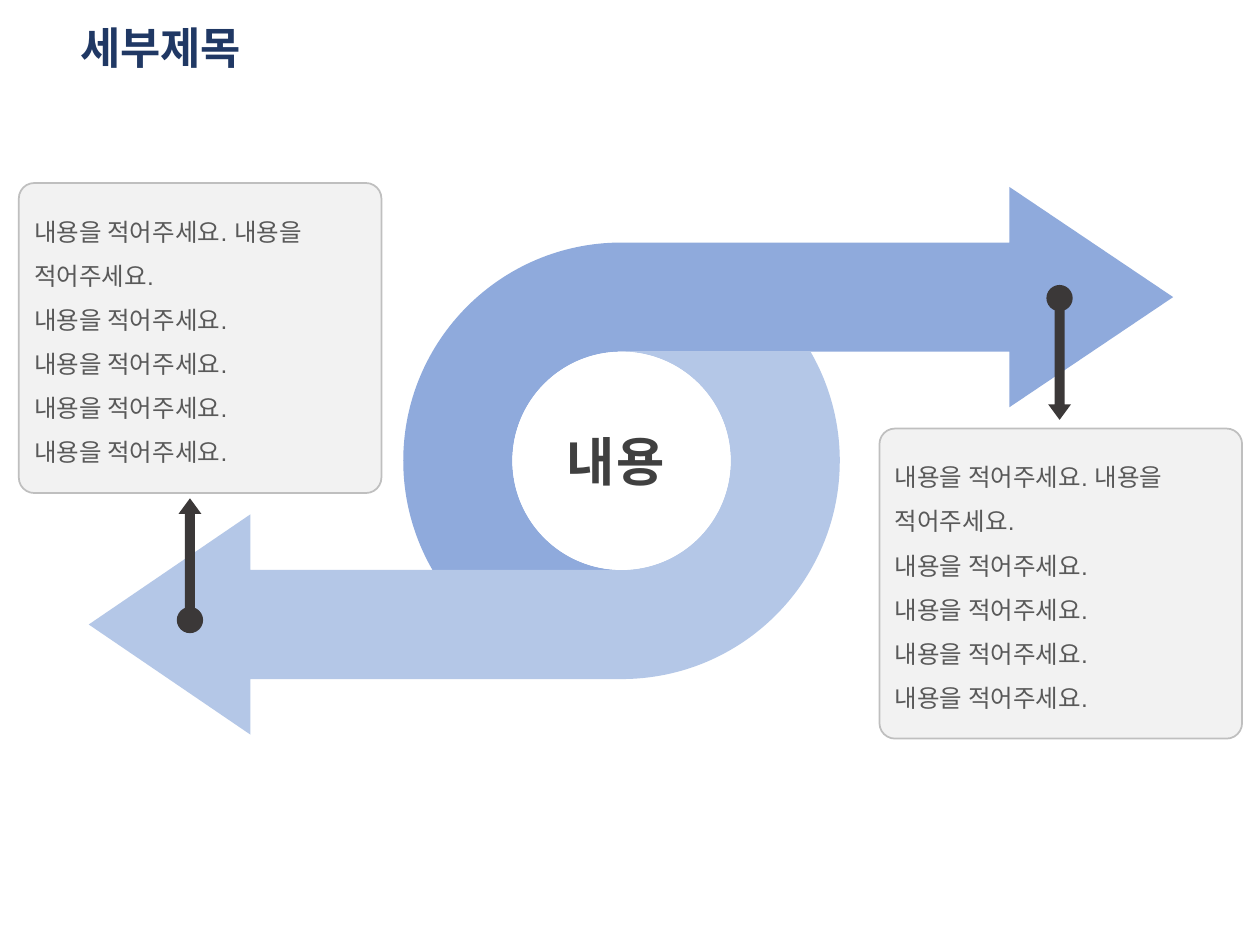
from math import cos, radians, sin, tan

from lxml.etree import SubElement
from pptx import Presentation
from pptx.dml.color import RGBColor
from pptx.enum.shapes import MSO_SHAPE as Shape
from pptx.enum.text import MSO_ANCHOR as Anchor, MSO_AUTO_SIZE as AutoSize
from pptx.oxml.ns import qn
from pptx.util import Cm, Pt

COLORS = {
    "title": "203864", "upper": "8FAADC", "lower": "B4C7E7",
    "hub": "FFFFFF", "hub_text": "404040", "marker": "3B3838",
    "panel": "F2F2F2", "border": "BFBFBF", "body": "595959",
}
LINE = "내용을 적어주세요."
BODY = [f"{LINE} {LINE}"] + [LINE] * 4

OUTER, INNER = 4.4, 2.2  # ring radii in cm
HEAD_HALF = 2.22
PANEL_WIDTH, PANEL_HEIGHT = 7.31, 6.25


def rgb(name):
    return RGBColor.from_string(COLORS[name])


def paint(shape, fill, border=None):
    shape.shadow.inherit = False
    shape.fill.solid()
    shape.fill.fore_color.rgb = rgb(fill)
    if border:
        shape.line.color.rgb = rgb(border)
        shape.line.width = Pt(1)
    else:
        shape.line.fill.background()


def add_shape(slide, kind, box, fill, border=None):
    shape = slide.shapes.add_shape(kind, *map(Cm, box))
    paint(shape, fill, border)
    return shape


def add_text(slide, box, lines, font_name, size, color, bold=False, spacing=1.0):
    frame = slide.shapes.add_textbox(*map(Cm, box)).text_frame
    frame.word_wrap = True
    frame.text = "\n".join(lines)
    for paragraph in frame.paragraphs:
        paragraph.line_spacing = spacing
        font = paragraph.font
        font.name, font.size, font.bold = font_name, Pt(size), bold
        font.color.rgb = rgb(color)
    return frame


def arc(radius, start, end):
    """Two control points and the end point of a circular curve."""
    start, end = radians(start), radians(end)
    pull = 4 / 3 * tan((end - start) / 4)

    def on_circle(angle, tangent):
        return (radius * (cos(angle) - tangent * sin(angle)),
                radius * (sin(angle) + tangent * cos(angle)))

    return [on_circle(start, pull), on_circle(end, -pull), on_circle(end, 0)]


def bend(shape, segments):
    """Turn each three-point segment of the outline into one curve."""
    lines = iter(list(shape._element.iter(qn("a:lnTo"))))
    for segment in segments:
        parts = [next(lines) for _ in segment]
        if len(parts) == 3:
            curve = SubElement(parts[0].getparent(), qn("a:cubicBezTo"))
            parts[0].addprevious(curve)
            for part in parts:
                curve.append(part[0])
                part.getparent().remove(part)


def add_curl_arrow(slide, center, neck, reach, direction, fill):
    """Ring half that runs out into an arrow; direction -1 turns it by 180 degrees."""
    middle = -(OUTER + INNER) / 2
    segments = [
        [(neck, middle - HEAD_HALF)], [(reach, middle)], [(neck, middle + HEAD_HALF)],
        [(neck, -INNER)], [(0, -INNER)],
        arc(INNER, 270, 180), arc(INNER, 180, 90),
        [(OUTER * cos(radians(150)), INNER)],
        arc(OUTER, 150, 180), arc(OUTER, 180, 270),
    ]
    outline = [(neck, -OUTER)] + sum(segments, [])
    points = [(Cm(center[0] + direction * x), Cm(center[1] + direction * y))
              for x, y in outline]
    builder = slide.shapes.build_freeform(*points[0])
    builder.add_line_segments(points[1:], close=False)
    shape = builder.convert_to_shape()
    bend(shape, segments)
    paint(shape, fill)


def add_hub(slide, center):
    x, y = center
    add_shape(slide, Shape.OVAL, (x - INNER, y - INNER, 2 * INNER, 2 * INNER), "hub")
    frame = add_text(slide, (x - 1.35, y - 0.77, 2.72, 1.55), ["내용"],
                     "Arial", 30, "hub_text", bold=True)
    frame.word_wrap = False
    frame.auto_size = AutoSize.SHAPE_TO_FIT_TEXT
    frame.paragraphs[0].runs[0]._r.get_or_add_rPr().set("spc", "100")


def add_marker(slide, x, y, direction):
    """Dot centred at x, y with an arrow down (1) or up (-1)."""
    dot, length, width = 0.53, 2.21, 0.46
    add_shape(slide, Shape.OVAL, (x - dot / 2, y - dot / 2, dot, dot), "marker")
    middle = y + direction * 1.35
    arrow = add_shape(slide, Shape.RIGHT_ARROW,
                      (x - length / 2, middle - width / 2, length, width), "marker")
    arrow.adjustments[0], arrow.adjustments[1] = 0.44, 0.68
    arrow.rotation = 90 * direction % 360


def add_panel(slide, left, top):
    panel = add_shape(slide, Shape.ROUNDED_RECTANGLE,
                      (left, top, PANEL_WIDTH, PANEL_HEIGHT), "panel", "border")
    panel.adjustments[0] = 0.05
    frame = add_text(slide, (left + 0.06, top + 0.26, PANEL_WIDTH, 5.64), BODY,
                     "Arial", 14, "body", spacing=1.5)
    frame.auto_size = AutoSize.SHAPE_TO_FIT_TEXT


def main():
    presentation = Presentation()
    presentation.slide_width, presentation.slide_height = Cm(25.4), Cm(19.05)
    slide = presentation.slides.add_slide(presentation.slide_layouts[6])

    # Title
    title = add_text(slide, (1.37, 0.53, 21.9, 0.97), ["세부제목"],
                     "Calibri", 25, "title", bold=True, spacing=0.9)
    title.vertical_anchor = Anchor.MIDDLE

    # Two interlocking arrows around the hub
    center = (12.53, 9.29)
    add_curl_arrow(slide, center, 7.82, 11.12, 1, "upper")
    add_curl_arrow(slide, center, 7.48, 10.74, -1, "lower")
    add_hub(slide, center)

    # Text panels with their markers
    add_marker(slide, 21.36, 6.01, 1)
    add_panel(slide, 17.73, 8.64)
    add_marker(slide, 3.83, 12.5, -1)
    add_panel(slide, 0.38, 3.69)

    presentation.save("out.pptx")


if __name__ == "__main__":
    main()
